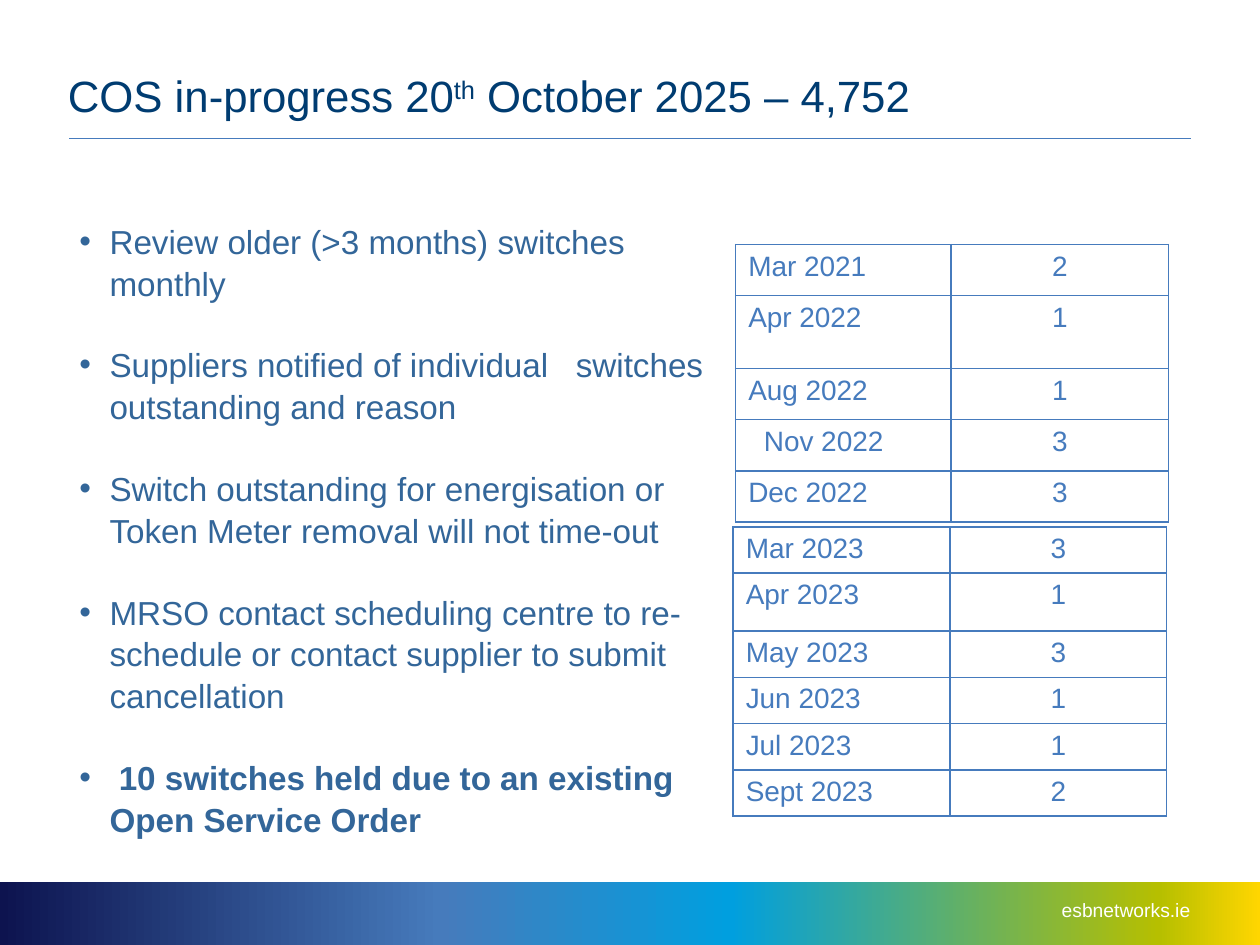
"""Build the slide on change-of-supplier switches still in progress."""
from lxml.etree import SubElement
from pptx import Presentation
from pptx.dml.color import RGBColor
from pptx.enum.shapes import MSO_CONNECTOR, MSO_SHAPE
from pptx.enum.text import MSO_ANCHOR, MSO_AUTO_SIZE, PP_ALIGN
from pptx.oxml import parse_xml
from pptx.oxml.ns import nsdecls, qn
from pptx.util import Cm, Pt

FONT = "Arial"
NAVY, BLUE, STEEL, WHITE = "003C71", "467BBD", "336699", "FFFFFF"
RAINBOW = [(0, "0D134F"), (35, "467BBC"), (58, "009FDF"), (92, "B6BF00"), (100, "FFD600")]

TITLE = [("COS in-progress 20", 0), ("th", 30), (" October 2025 – 4,752", 0)]
WEBSITE = "esbnetworks.ie"
ACTIONS = [
    ("Review older (>3 months) switches monthly", False),
    ("Suppliers notified of individual   switches outstanding and reason", False),
    ("Switch outstanding for energisation or Token Meter removal will not time-out", False),
    ("MRSO contact scheduling centre to re- schedule or contact supplier to submit cancellation", False),
    (" 10 switches held due to an existing Open Service Order", True),
]
INDENTED_MONTH = "Nov 2022"
TALL_ROW = 1
MONTH_TABLES = [
    dict(left=14.83, top=4.93, columns=(4.34, 4.39), row=1.03, tall=1.47,
         counts=[("Mar 2021", 2), ("Apr 2022", 1), ("Aug 2022", 1),
                 (INDENTED_MONTH, 3), ("Dec 2022", 3)]),
    dict(left=14.78, top=10.62, columns=(4.37, 4.37), row=0.93, tall=1.17,
         counts=[("Mar 2023", 3), ("Apr 2023", 1), ("May 2023", 3),
                 ("Jun 2023", 1), ("Jul 2023", 1), ("Sept 2023", 2)]),
]


def colour(hex_string):
    return RGBColor.from_string(hex_string)


def write(paragraph, text, size, ink, bold=False, align=PP_ALIGN.LEFT, raised=0):
    paragraph.alignment = align
    run = paragraph.add_run()
    run.text = text
    font = run.font
    font.name, font.size, font.bold = FONT, Pt(size), bold
    font.color.rgb = colour(ink)
    if raised:
        run._r.get_or_add_rPr().set("baseline", str(raised * 1000))


def set_bullet(paragraph, ink, margin, hang):
    properties = paragraph._p.get_or_add_pPr()
    properties.set("marL", str(Cm(margin)))
    properties.set("indent", str(-Cm(hang)))
    SubElement(SubElement(properties, qn("a:buClr")), qn("a:srgbClr"), val=ink)
    SubElement(properties, qn("a:buFont"), typeface=FONT)
    SubElement(properties, qn("a:buChar"), char="•")


def set_borders(cell, ink, width):
    properties = cell._tc.get_or_add_tcPr()
    for side in ("lnL", "lnR", "lnT", "lnB"):
        line = SubElement(properties, qn(f"a:{side}"), w=str(Pt(width)))
        SubElement(SubElement(line, qn("a:solidFill")), qn("a:srgbClr"), val=ink)


def add_title(slide):
    title = slide.shapes.title
    title.left, title.top, title.width, title.height = Cm(1.37), Cm(0.61), Cm(18.92), Cm(1.98)
    frame = title.text_frame
    frame.auto_size = MSO_AUTO_SIZE.NONE
    frame.vertical_anchor = MSO_ANCHOR.MIDDLE
    frame.margin_left = frame.margin_right = 0
    heading = frame.paragraphs[0]
    heading.line_spacing = Pt(48)
    for text, raised in TITLE:
        write(heading, text, 25, NAVY, raised=raised)
    rule = slide.shapes.add_connector(MSO_CONNECTOR.STRAIGHT, Cm(1.4), Cm(2.79), Cm(24), Cm(2.79))
    rule.line.color.rgb = colour(BLUE)
    rule.line.width = Pt(1)
    SubElement(rule._element.spPr, qn("a:effectLst"))


def add_footer(slide):
    band = slide.shapes.add_shape(MSO_SHAPE.RECTANGLE, 0, Cm(17.78), Cm(25.4), Cm(1.27))
    band.shadow.inherit = False
    band.line.fill.background()
    band.fill.gradient()
    band.fill.gradient_angle = 0
    stops = "".join(f'<a:gs pos="{place * 1000}"><a:srgbClr val="{ink}"/></a:gs>'
                    for place, ink in RAINBOW)
    gradient = band._element.spPr.find(qn("a:gradFill"))
    gradient.replace(gradient.find(qn("a:gsLst")),
                     parse_xml(f'<a:gsLst {nsdecls("a")}>{stops}</a:gsLst>'))
    website = slide.shapes.add_textbox(Cm(19.33), Cm(17.98), Cm(4.67), Cm(0.74)).text_frame
    website.word_wrap = True
    website.margin_right = 0
    write(website.paragraphs[0], WEBSITE, 11, WHITE, align=PP_ALIGN.RIGHT)


def add_actions(slide):
    frame = slide.shapes.add_textbox(Cm(0.69), Cm(4.29), Cm(13.77), Cm(12.45)).text_frame
    frame.word_wrap = True
    for index, (text, bold) in enumerate(ACTIONS):
        action = frame.add_paragraph() if index else frame.paragraphs[0]
        set_bullet(action, STEEL, margin=1.27, hang=0.61)
        action.line_spacing = 1.05
        if index:
            action.space_before = Pt(22.8)
        write(action, text, 19, STEEL, bold=bold)


def add_month_table(slide, left, top, columns, row, tall, counts):
    heights = [tall if index == TALL_ROW else row for index in range(len(counts))]
    table = slide.shapes.add_table(len(counts), len(columns), Cm(left), Cm(top),
                                   Cm(sum(columns)), Cm(sum(heights))).table
    table.first_row = table.horz_banding = False
    for column, width in zip(table.columns, columns):
        column.width = Cm(width)
    for table_row, height, (month, count) in zip(table.rows, heights, counts):
        table_row.height = Cm(height)
        month_cell, count_cell = table_row.cells
        for cell in (month_cell, count_cell):
            set_borders(cell, BLUE, 1)
            cell.fill.background()
        if month == INDENTED_MONTH:
            month_cell.margin_left = Cm(0.57)
        write(month_cell.text_frame.paragraphs[0], month, 16, BLUE)
        write(count_cell.text_frame.paragraphs[0], str(count), 16, BLUE, align=PP_ALIGN.CENTER)


def main():
    deck = Presentation()
    deck.slide_width, deck.slide_height = Cm(25.4), Cm(19.05)
    slide = deck.slides.add_slide(deck.slide_layouts.get_by_name("Title Only"))
    add_footer(slide)
    add_title(slide)
    add_actions(slide)
    for month_table in MONTH_TABLES:
        add_month_table(slide, **month_table)
    deck.save("out.pptx")


if __name__ == "__main__":
    main()
